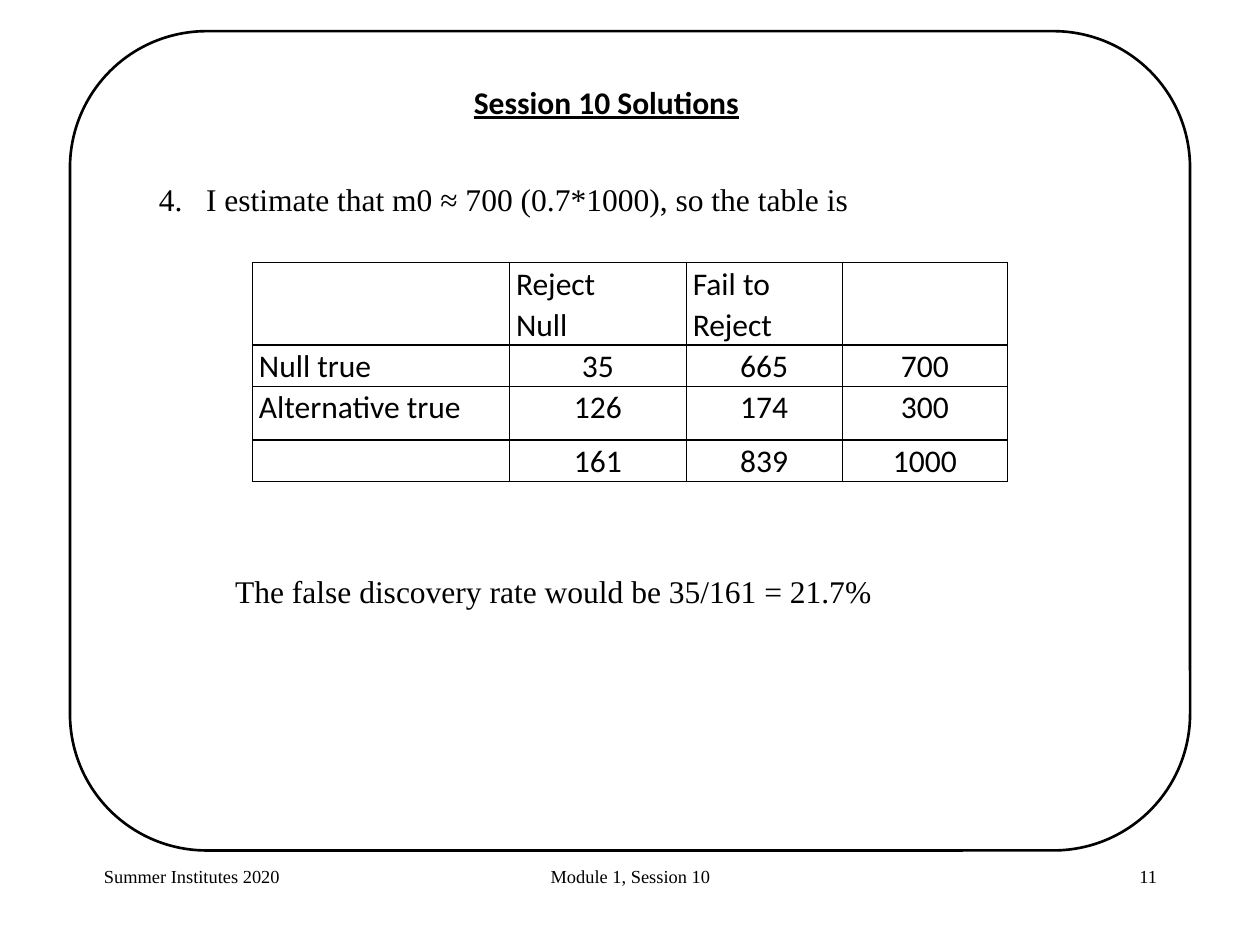
from dataclasses import dataclass

import lxml.etree
import pptx
import pptx.dml.color
import pptx.enum.shapes
import pptx.enum.text
import pptx.oxml.ns
import pptx.util

Inches, Pt = pptx.util.Inches, pptx.util.Pt
ALIGN = pptx.enum.text.PP_ALIGN
qn = pptx.oxml.ns.qn


@dataclass(frozen=True)
class Theme:
    ink: str = "000000"
    sans: str = "Calibri"
    serif: str = "Times New Roman"
    body: int = 24
    footer: int = 14
    spacing: float = 1.07


@dataclass(frozen=True)
class Note:
    text: str
    left: float
    top: float
    width: float
    height: float
    size: int
    align: ALIGN = ALIGN.LEFT


THEME = Theme()
INK = pptx.dml.color.RGBColor.from_string(THEME.ink)

NOTES = [
    Note("Summer Institutes 2020", 1, 9.11, 2.78, 0.67, THEME.footer),
    Note("Module 1, Session 10", 4.56, 9.11, 4.22, 0.67, THEME.footer, ALIGN.CENTER),
    Note("11", 9.56, 9.11, 2.78, 0.67, THEME.footer, ALIGN.RIGHT),
    Note("The false discovery rate would be 35/161 = 21.7%", 2.39, 6, 8.33, 0.5, THEME.body),
]

COLUMN_WIDTHS = [2.72, 1.87, 1.65, 1.75]
ROW_HEIGHTS = [0.86, 0.31, 0.57, 0.37]
TABLE_ROWS = [
    ["", "Reject\nNull", "Fail to\nReject", ""],
    ["Null true", "35", "665", "700"],
    ["Alternative true", "126", "174", "300"],
    ["", "161", "839", "1000"],
]


def add_run(p, text: str, font: str, size: int):
    r = p.add_run()
    r.text = text
    r.font.name = font
    r.font.size = Pt(size)
    r.font.color.rgb = INK
    return r


def place(sp, left: float, top: float, width: float, height: float):
    """Position a text shape and return its wrapped, top-anchored text frame."""
    sp.left, sp.top = Inches(left), Inches(top)
    sp.width, sp.height = Inches(width), Inches(height)
    tf = sp.text_frame
    tf.word_wrap = True
    tf.auto_size = pptx.enum.text.MSO_AUTO_SIZE.NONE
    tf.vertical_anchor = pptx.enum.text.MSO_ANCHOR.TOP
    return tf


def add_frame(s) -> None:
    sp = s.shapes.add_shape(
        pptx.enum.shapes.MSO_SHAPE.ROUNDED_RECTANGLE,
        Inches(0.74), Inches(0.33), Inches(11.85), Inches(8.67))
    sp.shadow.inherit = False
    sp.fill.background()
    sp.line.color.rgb = INK
    sp.line.width = Pt(2)


def add_note(s, note: Note) -> None:
    sp = s.shapes.add_textbox(0, 0, 0, 0)
    p = place(sp, note.left, note.top, note.width, note.height).paragraphs[0]
    p.alignment = note.align
    add_run(p, note.text, THEME.serif, note.size)


def fill_title(s) -> None:
    p = place(s.shapes.title, 3.08, 0.83, 6.67, 0.5).paragraphs[0]
    p.alignment = ALIGN.CENTER
    r = add_run(p, "Session 10 Solutions", THEME.sans, THEME.body)
    r.font.bold = True
    r.font.underline = True


def fill_answer(s) -> None:
    p = place(s.placeholders[1], 1.58, 1.83, 8.75, 0.51).paragraphs[0]
    p.line_spacing = THEME.spacing
    p.space_before, p.space_after = Pt(12), Pt(8)
    add_run(p, "I estimate that m0 ≈ 700 (0.7*1000), so the table is", THEME.serif, THEME.body)
    pPr = p._p.get_or_add_pPr()
    pPr.set("marL", str(Inches(0.5)))
    pPr.set("indent", str(-Inches(0.5)))
    lxml.etree.SubElement(pPr, qn("a:buAutoNum"), type="arabicPeriod", startAt="4")


def add_borders(cell) -> None:
    tcPr = cell._tc.get_or_add_tcPr()
    for side in ("lnL", "lnR", "lnT", "lnB"):
        ln = lxml.etree.SubElement(tcPr, qn(f"a:{side}"), w=str(Pt(1)))
        fill = lxml.etree.SubElement(ln, qn("a:solidFill"))
        lxml.etree.SubElement(fill, qn("a:srgbClr"), val=THEME.ink)


def fill_cell(cell, text: str, align: ALIGN, space_after: int) -> None:
    add_borders(cell)
    cell.fill.background()
    cell.margin_left = cell.margin_right = Inches(0.07)
    cell.margin_top = cell.margin_bottom = 0
    if not text:
        return
    tf = cell.text_frame
    for i, line in enumerate(text.split("\n")):
        p = tf.add_paragraph() if i else tf.paragraphs[0]
        p.alignment = align
        p.line_spacing = THEME.spacing
        p.space_after = Pt(space_after)
        add_run(p, line, THEME.sans, THEME.body)


def add_results_table(s) -> None:
    table = s.shapes.add_table(
        len(ROW_HEIGHTS), len(COLUMN_WIDTHS), Inches(2.67), Inches(2.78),
        Inches(sum(COLUMN_WIDTHS)), Inches(sum(ROW_HEIGHTS))).table
    table.first_row = table.horz_banding = False
    for column, width in zip(table.columns, COLUMN_WIDTHS):
        column.width = Inches(width)
    for i, (row, height, texts) in enumerate(zip(table.rows, ROW_HEIGHTS, TABLE_ROWS)):
        row.height = Inches(height)
        for j, text in enumerate(texts):
            align = ALIGN.CENTER if i and j else ALIGN.LEFT
            fill_cell(table.cell(i, j), text, align, 8 if i else 0)


def main() -> None:
    prs = pptx.Presentation()
    prs.slide_width, prs.slide_height = Inches(13.33), Inches(10)
    s = prs.slides.add_slide(prs.slide_layouts[1])
    add_frame(s)
    fill_title(s)
    fill_answer(s)
    add_results_table(s)
    for note in NOTES:
        add_note(s, note)
    prs.save("out.pptx")


if __name__ == "__main__":
    main()
